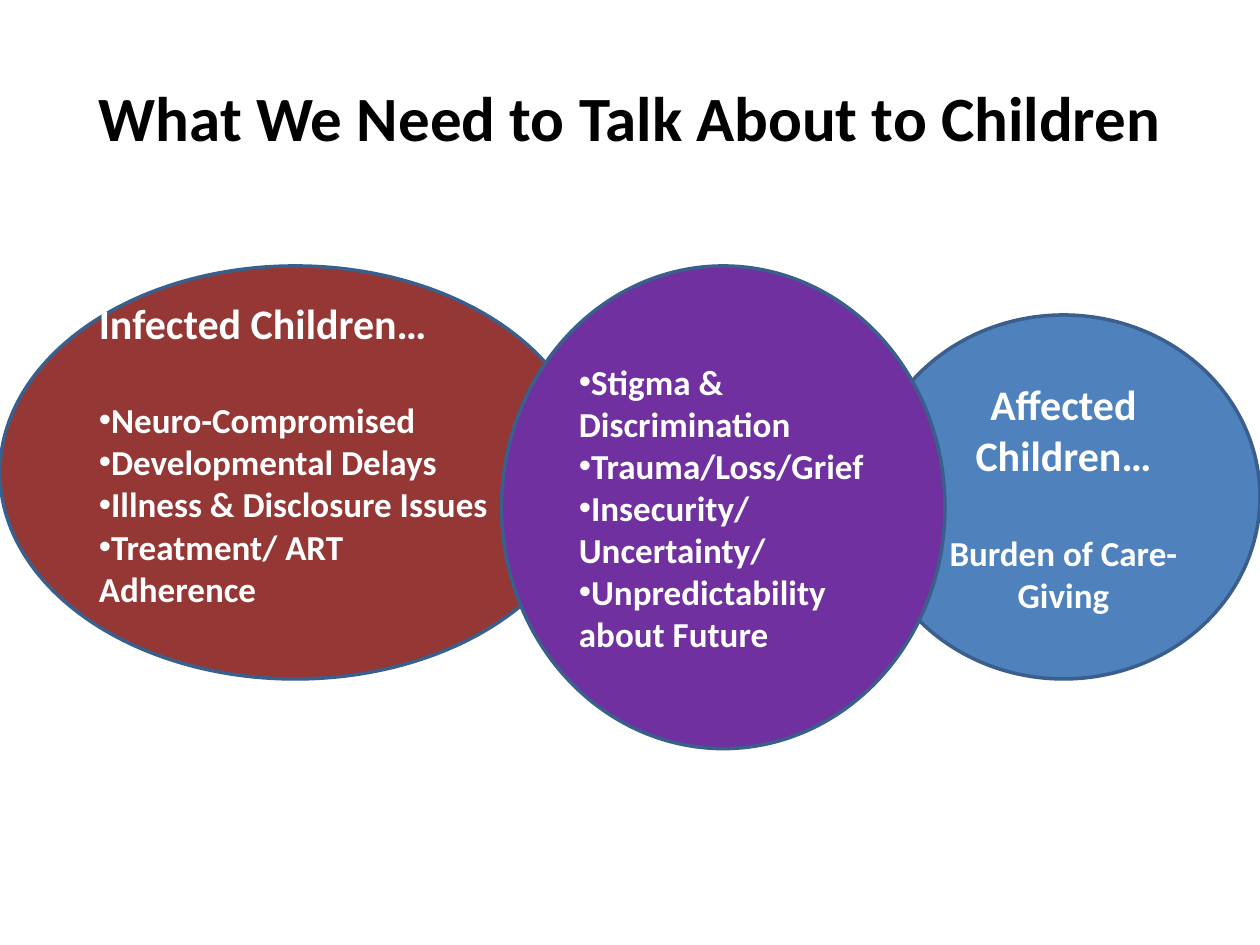
from lxml import etree
from pptx import Presentation
from pptx.dml.color import RGBColor
from pptx.enum import shapes, text
from pptx.oxml.ns import qn
from pptx.util import Pt

COLORS = {"black": "000000", "white": "FFFFFF", "outline": "3A5F8C",
          "red": "953735", "blue": "4F81BD", "purple": "7030A0"}
TITLE = "What We Need to Talk About to Children"
TITLE_BOX = (36, 21.6, 648, 90)
HEADING_SIZE, ITEM_SIZE, HEADING_GAP = 24, 20, 29.3
GROUPS = [
    {"box": (0, 152, 337.5, 236), "fill": "red", "bullets": True, "bottom": 25.6,
     "heading": "Infected Children…",
     "items": ["Neuro-Compromised", "Developmental Delays",
               "Illness & Disclosure Issues", "Treatment/ ART Adherence"]},
    {"box": (495.4, 180, 224.6, 208), "fill": "blue", "bullets": False, "bottom": 3.6,
     "heading": "Affected Children…", "items": ["Burden of Care-Giving"]},
    {"box": (286.6, 152, 253.4, 275.8), "fill": "purple", "bullets": True, "bottom": 3.6,
     "heading": None,
     "items": ["Stigma & Discrimination", "Trauma/Loss/Grief",
               "Insecurity/ Uncertainty/", "Unpredictability about Future"]},
]


def color(name):
    return RGBColor.from_string(COLORS[name])


def set_values(target, values):
    for name, value in values.items():
        setattr(target, name, value)


def prepare_frame(shape, bottom=3.6):
    set_values(shape.text_frame, {
        "word_wrap": True, "vertical_anchor": text.MSO_ANCHOR.MIDDLE,
        "margin_left": Pt(7.2), "margin_right": Pt(7.2),
        "margin_top": Pt(3.6), "margin_bottom": Pt(bottom)})
    return shape.text_frame


def write(paragraph, words, size, font_color, centered, gap=0, bullet=False):
    set_values(paragraph, {
        "alignment": text.PP_ALIGN.CENTER if centered else text.PP_ALIGN.LEFT,
        "space_after": Pt(gap)})
    run = paragraph.add_run()
    run.text = words
    set_values(run.font, {"name": "Calibri", "size": Pt(size), "bold": True})
    run.font.color.rgb = color(font_color)
    if bullet:
        properties = paragraph._p.get_or_add_pPr()
        etree.SubElement(properties, qn("a:buFont")).set("typeface", "Arial")
        etree.SubElement(properties, qn("a:buChar")).set("char", "•")


def add_group(slide, group):
    shape = slide.shapes.add_shape(shapes.MSO_SHAPE.OVAL, *map(Pt, group["box"]))
    shape.shadow.inherit = False
    shape.fill.solid()
    shape.fill.fore_color.rgb = color(group["fill"])
    shape.line.color.rgb = color("outline")
    shape.line.width = Pt(2)
    frame = prepare_frame(shape, group["bottom"])
    lines = [(item, ITEM_SIZE, 0, group["bullets"]) for item in group["items"]]
    if group["heading"]:
        lines.insert(0, (group["heading"], HEADING_SIZE, HEADING_GAP, False))
    for index, (words, size, gap, bullet) in enumerate(lines):
        paragraph = frame.add_paragraph() if index else frame.paragraphs[0]
        write(paragraph, words, size, "white", not group["bullets"], gap, bullet)


def main():
    presentation = Presentation()
    set_values(presentation, {"slide_width": Pt(720), "slide_height": Pt(540)})
    slide = presentation.slides.add_slide(presentation.slide_layouts[6])
    title = slide.shapes.add_textbox(*map(Pt, TITLE_BOX))
    write(prepare_frame(title).paragraphs[0], TITLE, 36, "black", True)
    for group in GROUPS:
        add_group(slide, group)
    presentation.save("out.pptx")


if __name__ == "__main__":
    main()
